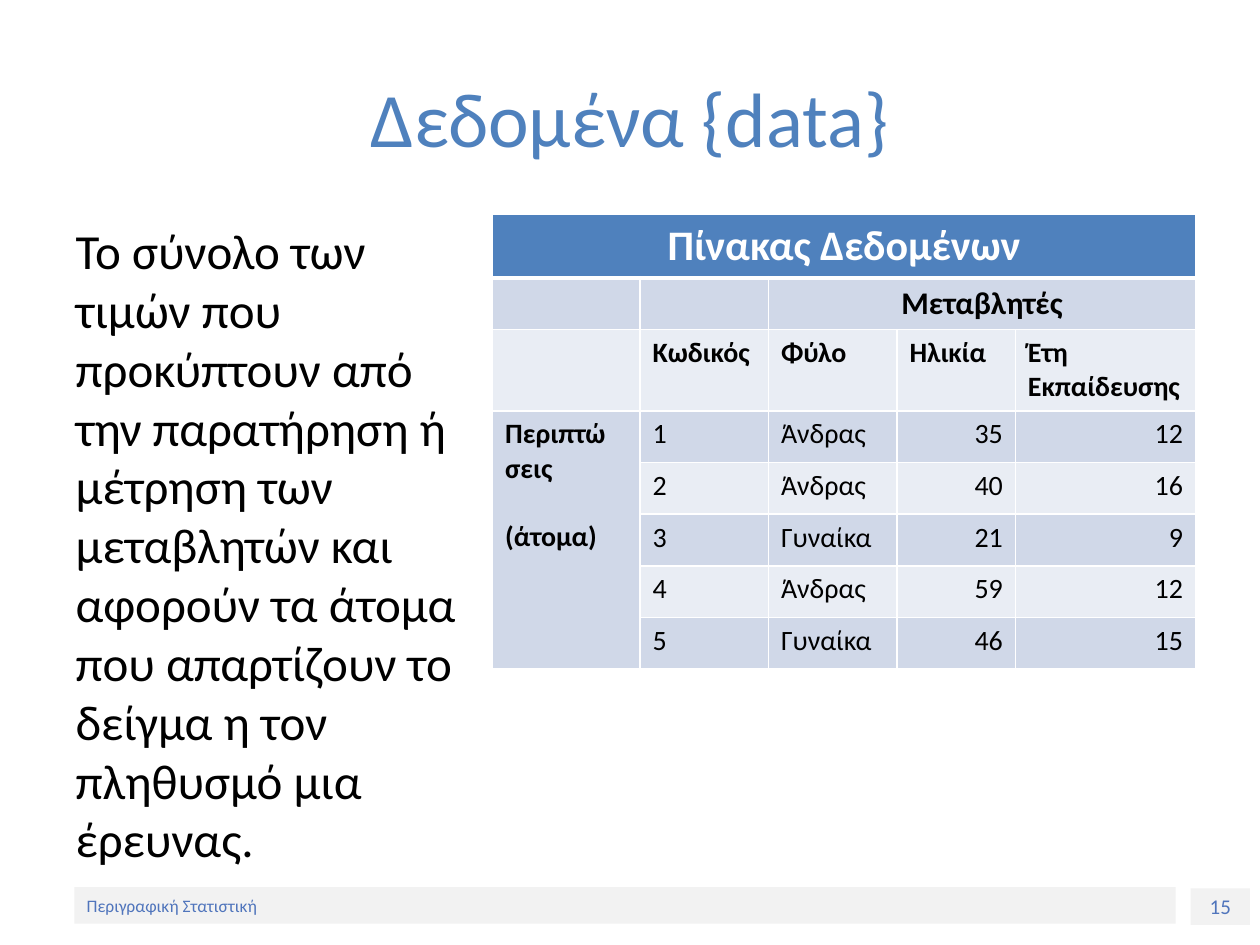
from lxml.etree import SubElement
from pptx import Presentation
from pptx.dml.color import RGBColor
from pptx.enum.shapes import MSO_SHAPE
from pptx.enum.text import MSO_ANCHOR, MSO_AUTO_SIZE, PP_ALIGN
from pptx.oxml.ns import qn
from pptx.util import Inches, Pt

WIDE, HIGH = Inches(10), Inches(7.5)
HEX = {"blue": "4F81BD", "foot": "5075BC", "gray": "F2F2F2", "dark": "D0D8E8",
       "pale": "E9EDF4", "black": "000000", "white": "FFFFFF"}
BODY = ("Το σύνολο των τιμών που προκύπτουν από την παρατήρηση ή μέτρηση των "
        "μεταβλητών και αφορούν τα άτομα που απαρτίζουν το δείγμα η τον "
        "πληθυσμό μια έρευνας.")
ROWS = [
    ["Πίνακας Δεδομένων", "", "", "", ""],
    ["", "", "Μεταβλητές", "", ""],
    ["", "Κωδικός", "Φύλο", "Ηλικία", "Έτη Εκπαίδευσης"],
    ["Περιπτώ\nσεις\n(άτομα)", "1", "Άνδρας", "35", "12"],
    ["", "2", "Άνδρας", "40", "16"],
    ["", "3", "Γυναίκα", "21", "9"],
    ["", "4", "Άνδρας", "59", "12"],
    ["", "5", "Γυναίκα", "46", "15"],
]
COLS = [1.17, 1.02, 1.02, 0.94, 1.43]


def tint(name):
    """Return the named colour."""
    return RGBColor.from_string(HEX[name])


def box(left, top, wide, high):
    """Turn inches into a box."""
    return [Inches(n) for n in (left, top, wide, high)]


def style(para, size, color, bold=False, align=PP_ALIGN.LEFT):
    """Set the font and alignment of a paragraph."""
    para.alignment = align
    font = para.font
    font.name, font.size, font.bold = "Calibri", Pt(size), bold
    font.color.rgb = tint(color)


def place(shape, area):
    """Move a shape into a box."""
    shape.left, shape.top, shape.width, shape.height = area


def add_title(slide, area):
    """Fill the title placeholder."""
    title = slide.shapes.title
    place(title, area)
    title.text_frame.text = "Δεδομένα {data}"
    title.text_frame.vertical_anchor = MSO_ANCHOR.MIDDLE
    style(title.text_frame.paragraphs[0], 44, "blue", align=PP_ALIGN.CENTER)


def add_body(slide, area):
    """Fill the body placeholder with plain text."""
    body = slide.placeholders[1]
    place(body, area)
    frame = body.text_frame
    frame.text = BODY
    frame.auto_size = MSO_AUTO_SIZE.NONE
    para = frame.paragraphs[0]
    props = para._p.get_or_add_pPr()
    props.set("marL", "0")
    props.set("indent", "0")
    SubElement(props, qn("a:buNone"))
    para.space_before = Pt(0)
    style(para, 28, "black")


def add_foot(slide, area, text, size, align):
    """Draw one footer block."""
    foot = slide.shapes.add_shape(MSO_SHAPE.RECTANGLE, *area)
    foot.shadow.inherit = False
    foot.fill.solid()
    foot.fill.fore_color.rgb = tint("gray")
    foot.line.fill.background()
    foot.text_frame.word_wrap = True
    foot.text_frame.vertical_anchor = MSO_ANCHOR.MIDDLE
    foot.text_frame.text = text
    style(foot.text_frame.paragraphs[0], size, "foot", align=align)


def edge(cell, row):
    """Give a cell white borders, thick below the heading."""
    props = cell._tc.get_or_add_tcPr()
    for side in "LRTB":
        thick = (row, side) in ((0, "B"), (1, "T"))
        line = SubElement(props, qn(f"a:ln{side}"), w=str(Pt(3 if thick else 1)))
        fill = SubElement(line, qn("a:solidFill"))
        SubElement(fill, qn("a:srgbClr"), val=HEX["white"])


def fill_cell(cell, row, col, text):
    """Write and format one cell by its row and column."""
    edge(cell, row)
    cell.fill.solid()
    shade = "blue" if row == 0 else "dark" if row % 2 else "pale"
    cell.fill.fore_color.rgb = tint(shade)
    cell.text = text
    size = {0: 24, 1: 18}.get(row, 16)
    align = PP_ALIGN.LEFT
    if row < 2:
        align = PP_ALIGN.CENTER
    elif row > 2 and col > 2:
        align = PP_ALIGN.RIGHT
    for para in cell.text_frame.paragraphs:
        style(para, size, "black" if row else "white", row < 3 or col == 0, align)


def add_grid(slide, area):
    """Build the data table with its merged headings."""
    grid = slide.shapes.add_table(len(ROWS), len(COLS), *area).table
    for col, wide in zip(grid.columns, COLS):
        col.width = Inches(wide)
    for r, texts in enumerate(ROWS):
        grid.rows[r].height = Inches(0.41)
        for c, text in enumerate(texts):
            fill_cell(grid.cell(r, c), r, c, text)
    for start, end in (((0, 0), (0, 4)), ((1, 2), (1, 4)), ((3, 0), (7, 0))):
        grid.cell(*start).merge(grid.cell(*end))
    grid.cell(3, 0).text_frame.paragraphs[2].space_before = Pt(19.5)


def main():
    """Build and save the slide."""
    deck = Presentation()
    deck.slide_width, deck.slide_height = WIDE, HIGH
    slide = deck.slides.add_slide(deck.slide_layouts[1])
    add_foot(slide, box(9.45, 7.05, 0.47, 0.29), "15", 12, PP_ALIGN.CENTER)
    add_foot(slide, box(0.59, 7.04, 8.74, 0.29), "Περιγραφική Στατιστική", 10,
             PP_ALIGN.LEFT)
    add_body(slide, box(0.5, 1.7, 3.29, 5.04))
    add_title(slide, box(0.5, 0.3, 9, 1.25))
    add_grid(slide, box(3.91, 1.7, sum(COLS), 0.41 * len(ROWS)))
    deck.save("out.pptx")


if __name__ == "__main__":
    main()
